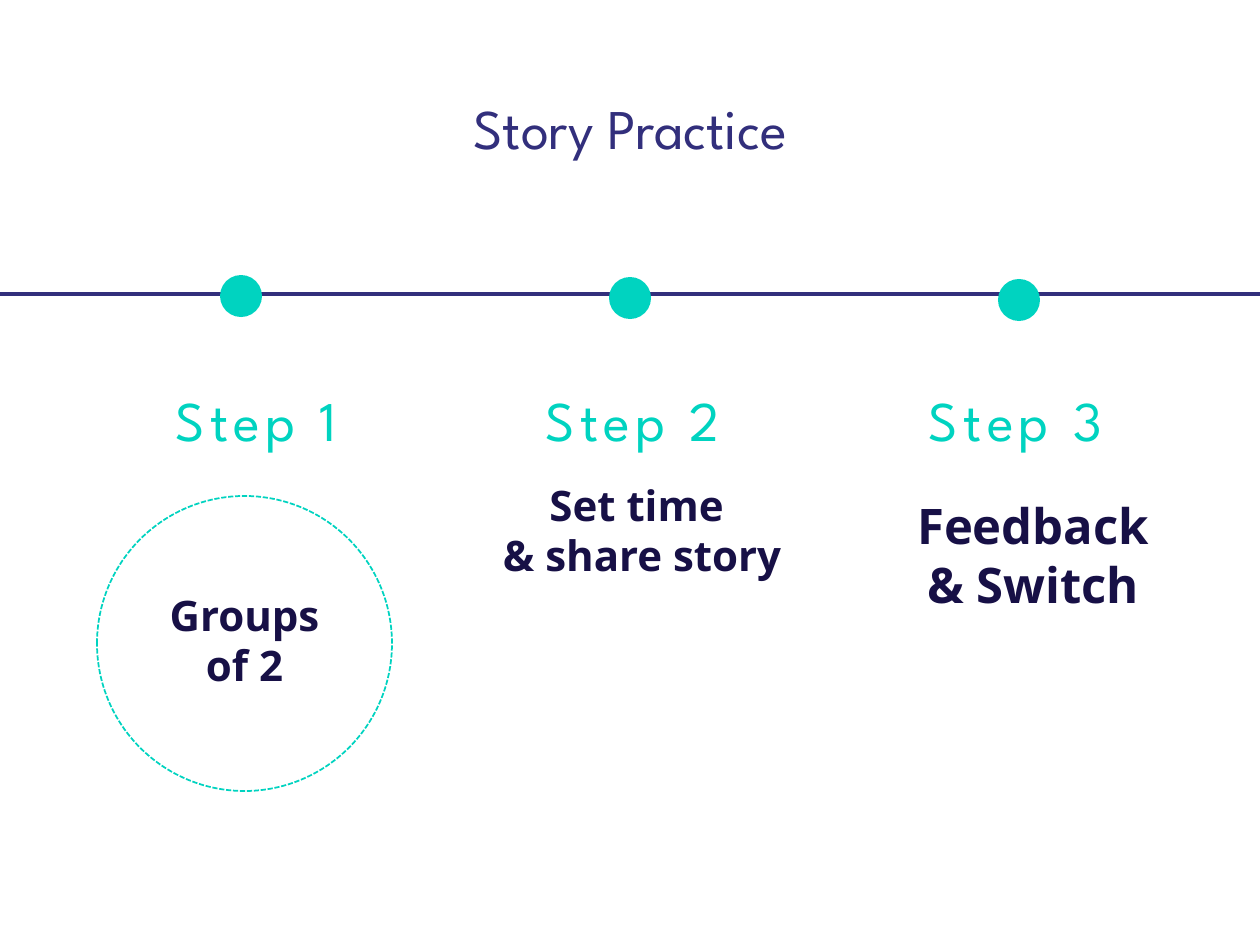
from pptx import Presentation, util as u
from pptx.dml.color import RGBColor
from pptx.enum import dml, shapes, text
from pptx.oxml.ns import qn
from lxml import etree

PX = 914400 / 126  # EMU in one px
NAVY, INK, TEAL = "322F7C", "171046", "00D3C0"
HEAD, BODY = "League Spartan", "Open Sans"


def rgb(code):
    return RGBColor.from_string(code)


def write(box, words, at, font, size, color, bold=False, gap=0, lead=None,
          fit=text.MSO_AUTO_SIZE.SHAPE_TO_FIT_TEXT):
    box.left, box.top, box.width, box.height = [round(n * PX) for n in at]
    frame = box.text_frame
    frame.word_wrap = True
    frame.auto_size = fit
    frame.text = words
    for para in frame.paragraphs:
        para.alignment = text.PP_ALIGN.CENTER
        para.line_spacing = lead
        for run in para.runs:
            run.font.name, run.font.size, run.font.bold = font, u.Pt(size), bold
            run.font.color.rgb = rgb(color)
            if gap:
                run.font._element.set("spc", str(gap * 100))


deck = Presentation()
deck.slide_width, deck.slide_height = round(1260 * PX), round(945 * PX)
slide = deck.slides.add_slide(deck.slide_layouts[5])
parts = slide.shapes

# Title
title = parts.title
write(title, "Story Practice", (200, 57, 861, 149), HEAD, 32, NAVY,
      lead=0.9, fit=text.MSO_AUTO_SIZE.NONE)
title.text_frame.vertical_anchor = text.MSO_ANCHOR.MIDDLE

# Timeline
y = round(294 * PX)
line = parts.add_connector(shapes.MSO_CONNECTOR.STRAIGHT, 0, y, deck.slide_width, y)
line.line.color.rgb = rgb(NAVY)
line.line.width = u.Pt(2.25)
etree.SubElement(line._element.spPr, qn("a:effectLst"))

# Ringed text of the first step
group = parts.add_group_shape()
ring = group.shapes.add_shape(shapes.MSO_SHAPE.OVAL,
                              *[round(n * PX) for n in (97, 496, 295, 295)])
ring.shadow.inherit = False
ring.fill.background()
ring.line.color.rgb = rgb(TEAL)
ring.line.width = u.Pt(1)
ring.line.dash_style = dml.MSO_LINE.SQUARE_DOT
write(group.shapes.add_textbox(0, 0, 1, 1), "Groups of 2", (147, 583, 195, 115),
      BODY, 24, INK, bold=True)

# Texts of the other steps
for words, at, size in (
    ("Set time \n& share story", (445, 473, 394, 115), 24),
    ("Feedback & Switch", (903, 489, 260, 131), 28),
):
    write(parts.add_textbox(0, 0, 1, 1), words, at, BODY, size, INK, bold=True)

# Step headings
for words, x in (("Step 1", 84), ("Step 2 ", 470), ("Step 3", 843)):
    write(parts.add_textbox(0, 0, 1, 1), words, (x, 379, 345, 81),
          HEAD, 32, TEAL, gap=3)

# Dots, evenly spaced and each a little lower
for i in range(3):
    dot = parts.add_shape(shapes.MSO_SHAPE.OVAL, round((220 + 389 * i) * PX),
                          round((275 + 2 * i) * PX), round(42 * PX), round(42 * PX))
    dot.shadow.inherit = False
    dot.fill.solid()
    dot.fill.fore_color.rgb = rgb(TEAL)
    dot.line.fill.background()

deck.save("out.pptx")
